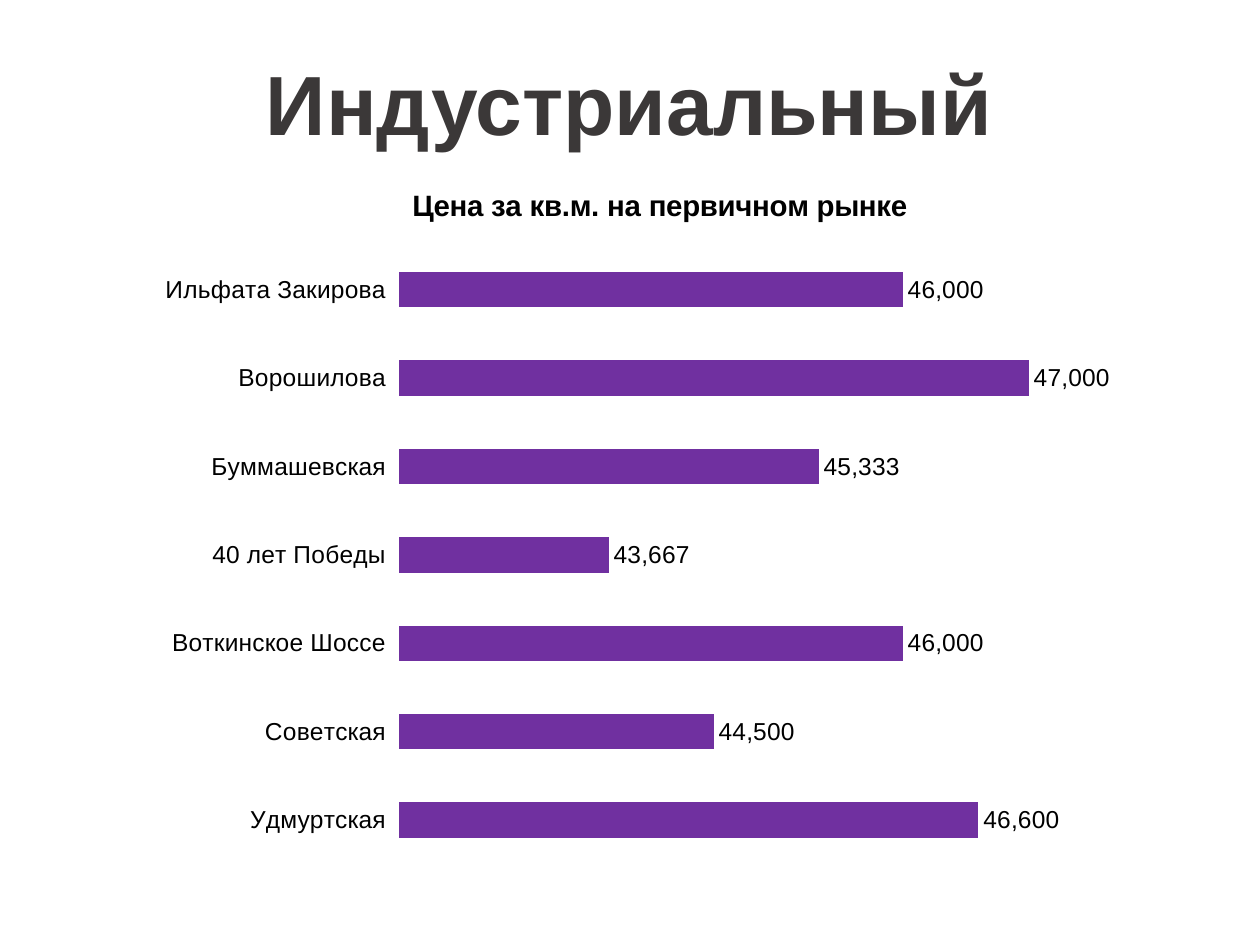
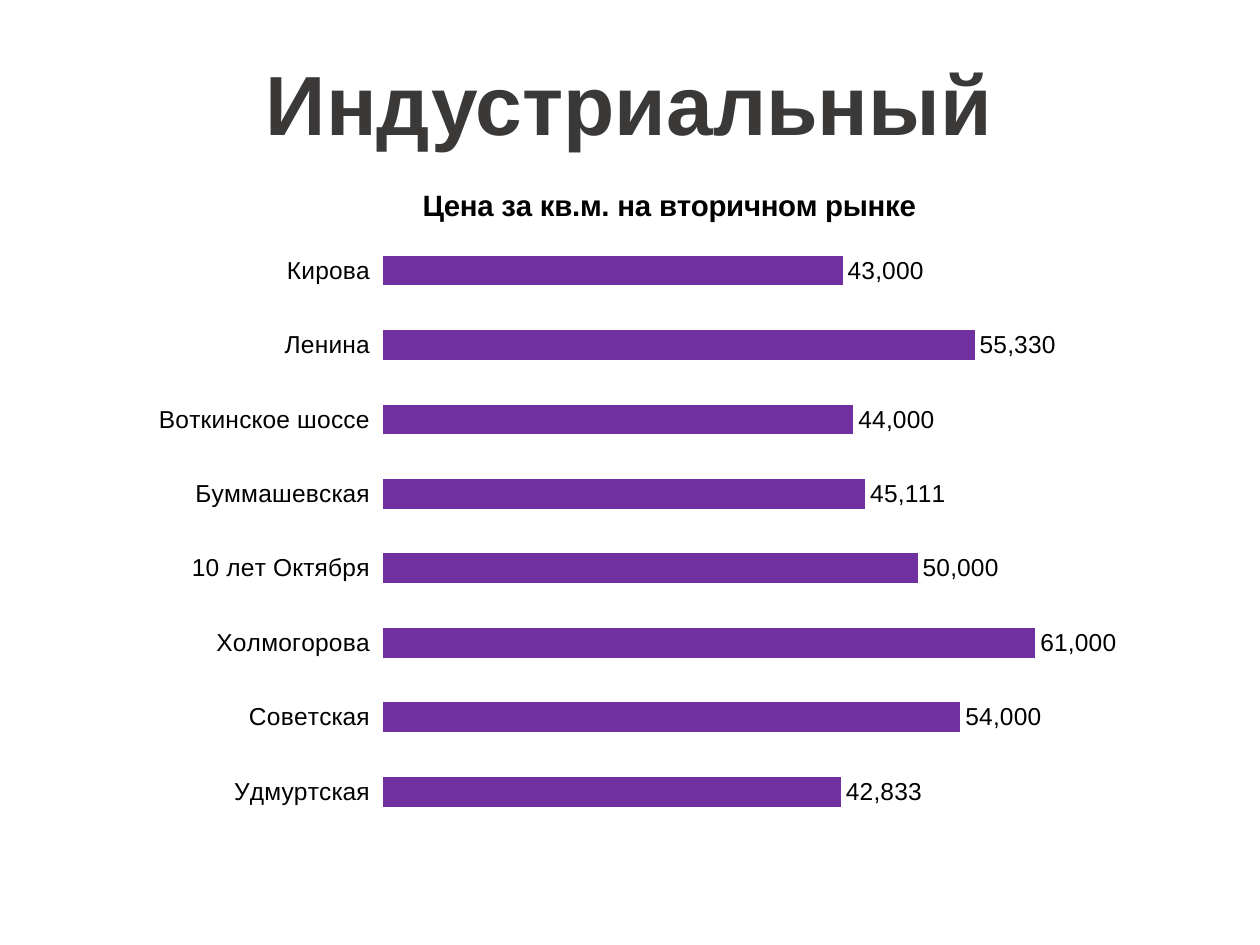
from dataclasses import dataclass

from pptx import Presentation
from pptx.chart.chart import Chart
from pptx.chart.data import CategoryChartData
from pptx.dml.color import RGBColor
from pptx.enum.chart import XL_CHART_TYPE, XL_LABEL_POSITION, XL_TICK_MARK
from pptx.enum.text import PP_ALIGN
from pptx.oxml import parse_xml
from pptx.oxml.ns import nsdecls
from pptx.slide import Slide
from pptx.text.text import Font, TextFrame
from pptx.util import Inches, Pt

COLORS = {"title": "3B3838", "text": "000000", "bar": "7030A0"}
FACE = "Arial"
DISTRICT = "Индустриальный"
FORMAT = "#,##0"


@dataclass(frozen=True)
class Market:
    title: str
    left: float
    width: float
    low: int
    high: int
    plot: tuple[float, float, float, float]  # x, y, w, h as parts of the chart
    prices: dict[str, int]  # street to price, from the bottom bar up


MARKETS = [
    Market("Цена за кв.м. на первичном рынке", 1.14, 8.19, 42000, 48000,
           (0.247, 0.119, 0.733, 0.86), {
               "Удмуртская": 46600,
               "Советская": 44500,
               "Воткинское Шоссе": 46000,
               "40 лет Победы": 43667,
               "Буммашевская": 45333,
               "Ворошилова": 47000,
               "Ильфата Закирова": 46000,
           }),
    Market("Цена за кв.м. на вторичном рынке", 1.02, 8.58, 0, 70000,
           (0.235, 0.102, 0.693, 0.828), {
               "Удмуртская": 42833,
               "Советская": 54000,
               "Холмогорова": 61000,
               "10 лет Октября": 50000,
               "Буммашевская": 45111,
               "Воткинское шоссе": 44000,
               "Ленина": 55330,
               "Кирова": 43000,
           }),
]


def style(font: Font, size: float, color: str, bold: bool = False) -> None:
    font.name = FACE
    font.size = Pt(size)
    font.bold = bold
    font.color.rgb = RGBColor.from_string(COLORS[color])


def write(frame: TextFrame, text: str, *, size: float, color: str = "text",
          bold: bool = True, align: PP_ALIGN = PP_ALIGN.CENTER) -> None:
    para = frame.paragraphs[0]
    para.alignment = align
    run = para.add_run()
    run.text = text
    style(run.font, size, color, bold)


def add_title(slide: Slide) -> None:
    box = slide.shapes.add_textbox(Inches(0.98), Inches(0.36), Inches(8.03), Inches(0.91))
    box.text_frame.word_wrap = True
    write(box.text_frame, DISTRICT, size=48, color="title")


def set_plot(chart: Chart, plot: tuple[float, float, float, float]) -> None:
    """Fix the inner plot area within the chart."""
    modes = "".join(f'<c:{side}Mode val="edge"/>' for side in "xy")
    sizes = "".join(f'<c:{key} val="{part}"/>' for key, part in zip("xywh", plot))
    layout = parse_xml(
        f'<c:layout {nsdecls("c")}><c:manualLayout><c:layoutTarget val="inner"/>'
        f"{modes}{sizes}</c:manualLayout></c:layout>")
    area = chart._chartSpace.chart.plotArea
    for old in area.findall(layout.tag):
        area.remove(old)
    area.insert(0, layout)


def add_chart(slide: Slide, market: Market) -> None:
    data = CategoryChartData(number_format=FORMAT)
    data.categories = list(market.prices)
    data.add_series(market.title, list(market.prices.values()))
    chart = slide.shapes.add_chart(
        XL_CHART_TYPE.BAR_CLUSTERED, Inches(market.left), Inches(1.27),
        Inches(market.width), Inches(5.71), data).chart
    style(chart.font, 14, "text")
    chart.has_legend = False
    chart.has_title = True
    write(chart.chart_title.text_frame, market.title, size=16.8)
    set_plot(chart, market.plot)

    streets = chart.category_axis
    streets.format.line.fill.background()
    streets.major_tick_mark = XL_TICK_MARK.OUTSIDE
    scale = chart.value_axis
    scale.visible = False
    scale.has_major_gridlines = False
    scale.minimum_scale = market.low
    scale.maximum_scale = market.high

    bars = chart.plots[0]
    bars.gap_width = 150
    bars.vary_by_categories = False
    fill = bars.series[0].format.fill
    fill.solid()
    fill.fore_color.rgb = RGBColor.from_string(COLORS["bar"])
    bars.has_data_labels = True
    labels = bars.data_labels
    labels.show_value = True
    labels.number_format = FORMAT
    labels.number_format_is_linked = False
    labels.position = XL_LABEL_POSITION.OUTSIDE_END
    style(labels.font, 14, "text")


def main() -> None:
    deck = Presentation()
    deck.slide_width = Inches(10)
    deck.slide_height = Inches(7.5)
    for market in MARKETS:
        slide = deck.slides.add_slide(deck.slide_layouts[6])
        add_title(slide)
        add_chart(slide, market)
    deck.save("out.pptx")


if __name__ == "__main__":
    main()
